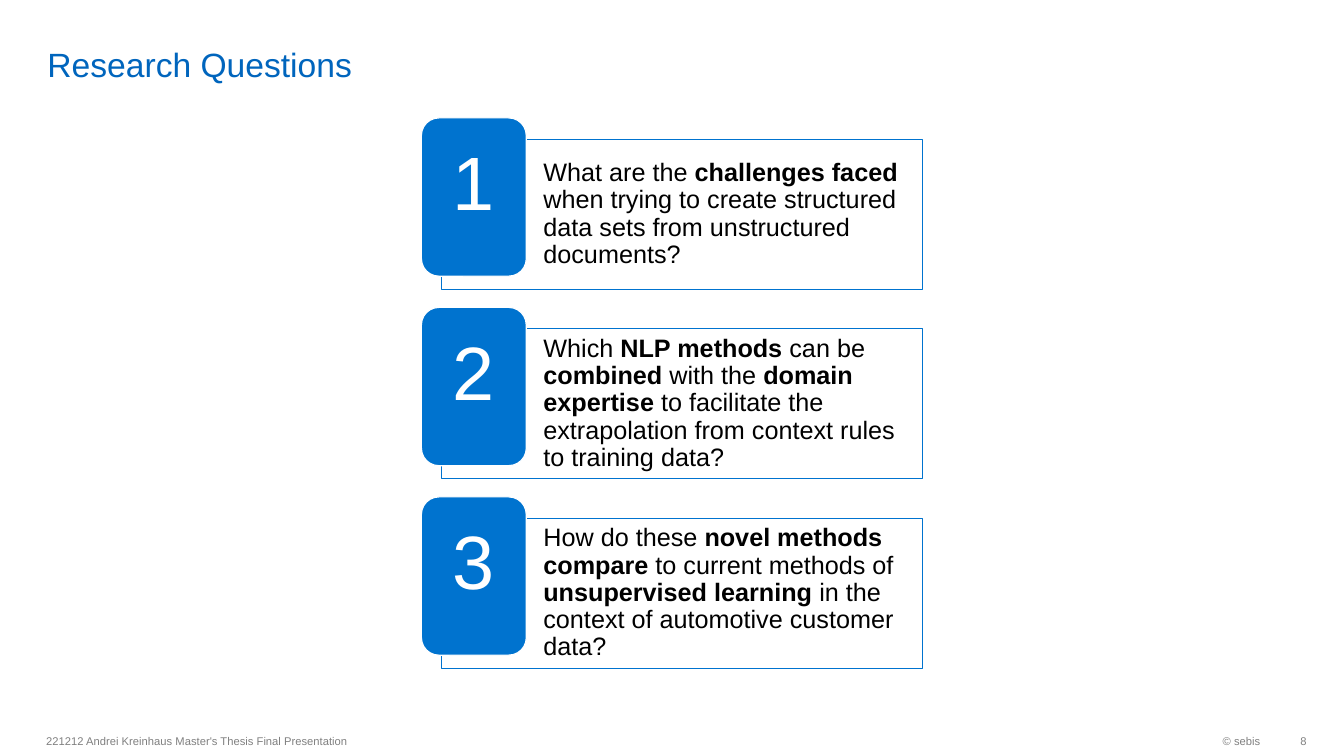
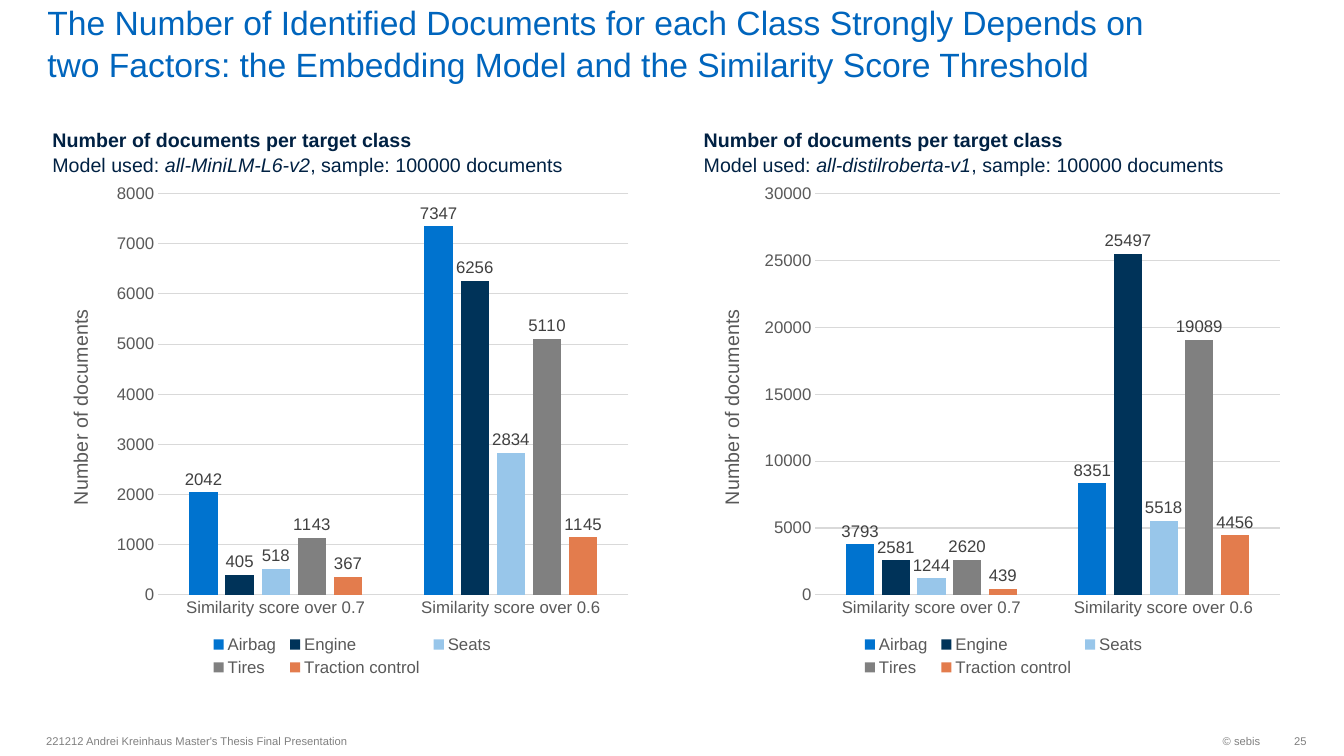
from dataclasses import dataclass

from lxml import etree
from pptx import Presentation
from pptx.chart.data import CategoryChartData
from pptx.dml.color import RGBColor
from pptx.enum.chart import XL_CHART_TYPE, XL_LABEL_POSITION, XL_LEGEND_POSITION, XL_TICK_MARK
from pptx.enum.shapes import MSO_SHAPE
from pptx.enum.text import MSO_ANCHOR, MSO_AUTO_SIZE, PP_ALIGN
from pptx.oxml.ns import qn
from pptx.util import Inches, Pt

LEFT, CENTER, RIGHT = PP_ALIGN.LEFT, PP_ALIGN.CENTER, PP_ALIGN.RIGHT
TOP, MIDDLE, BOTTOM = MSO_ANCHOR.TOP, MSO_ANCHOR.MIDDLE, MSO_ANCHOR.BOTTOM
RECTANGLE, ROUNDED = MSO_SHAPE.RECTANGLE, MSO_SHAPE.ROUNDED_RECTANGLE
NO_AUTOFIT = MSO_AUTO_SIZE.NONE
COLUMNS = XL_CHART_TYPE.COLUMN_CLUSTERED
LEGEND_BOTTOM = XL_LEGEND_POSITION.BOTTOM
OUTSIDE_END = XL_LABEL_POSITION.OUTSIDE_END
NO_TICK = XL_TICK_MARK.NONE


@dataclass(frozen=True)
class Theme:
    font: str = "Arial"
    title: RGBColor = RGBColor.from_string("0065BD")
    accent: RGBColor = RGBColor.from_string("0073CF")
    caption: RGBColor = RGBColor.from_string("002143")
    footer: RGBColor = RGBColor.from_string("808080")
    axis: RGBColor = RGBColor.from_string("595959")
    label: RGBColor = RGBColor.from_string("404040")
    grid: RGBColor = RGBColor.from_string("D9D9D9")
    black: RGBColor = RGBColor.from_string("000000")
    white: RGBColor = RGBColor.from_string("FFFFFF")
    series: tuple = ("0073CF", "003359", "98C6EA", "808080", "E37C4D")
    title_size: Pt = Pt(24)
    footer_size: Pt = Pt(8)
    question_size: Pt = Pt(18)
    number_size: Pt = Pt(54)
    caption_size: Pt = Pt(14)
    chart_size: Pt = Pt(12)


THEME = Theme()


def assign(target, **values):
    for attribute, value in values.items():
        setattr(target, attribute, value)


def write(frame, lines, size, colour, align=LEFT, anchor=TOP, spacing=1.0,
          margins=(0.1, 0.05, 0.1, 0.05)):
    left, top, right, bottom = map(Inches, margins)
    assign(frame, word_wrap=True, auto_size=NO_AUTOFIT, vertical_anchor=anchor,
           margin_left=left, margin_top=top, margin_right=right, margin_bottom=bottom)
    for index, line in enumerate(lines):
        paragraph = frame.add_paragraph() if index else frame.paragraphs[0]
        assign(paragraph, alignment=align, line_spacing=spacing)
        for text, style in line:
            run = paragraph.add_run()
            run.text = text
            assign(run.font, name=THEME.font, size=size,
                   bold=style == "bold", italic=style == "italic")
            run.font.color.rgb = colour


presentation = Presentation()
assign(presentation, slide_width=Inches(13.33), slide_height=Inches(7.5))
title_only = presentation.slide_layouts[5]

pages = [
    ("Research Questions", "8"),
    ("The Number of Identified Documents for each Class Strongly Depends on "
     "two Factors: the Embedding Model and the Similarity Score Threshold", "25"),
]
slides = []
for heading, page_number in pages:
    slide = presentation.slides.add_slide(title_only)
    slides.append(slide)
    title = slide.shapes.title
    assign(title, left=Inches(0.37), top=Inches(0.05), width=Inches(11.58), height=Inches(0.79))
    write(title.text_frame, [[(heading, "")]], THEME.title_size, THEME.title,
          anchor=BOTTOM, spacing=1.05, margins=(0.1, 0, 0.1, 0))
    footers = [
        (0.36, 6.3, "221212 Andrei Kreinhaus Master's Thesis Final Presentation", LEFT, 0.1),
        (10.26, 2.34, "© sebis", RIGHT, 0.1),
        (12.6, 0.36, page_number, RIGHT, 0),
    ]
    for left, width, text, align, right_margin in footers:
        footer = slide.shapes.add_textbox(Inches(left), Inches(7.19), Inches(width), Inches(0.32))
        write(footer.text_frame, [[(text, "")]], THEME.footer_size, THEME.footer,
              align, MIDDLE, margins=(0.1, 0.05, right_margin, 0.05))

questions_slide, results_slide = slides

questions = [
    [("What are the ", ""), ("challenges faced ", "bold"),
     ("when trying to create structured data sets from unstructured documents?", "")],
    [("Which ", ""), ("NLP methods ", "bold"), ("can be ", ""), ("combined", "bold"),
     (" with the ", ""), ("domain expertise", "bold"),
     (" to facilitate the extrapolation from context rules to training data?", "")],
    [("How do these ", ""), ("novel methods compare", "bold"),
     (" to current methods of ", ""), ("unsupervised learning ", "bold"),
     ("in the context of automotive customer data?", "")],
]
for index, question in enumerate(questions):
    top = 1.38 + index * 1.88
    panel = questions_slide.shapes.add_shape(
        RECTANGLE, Inches(4.38), Inches(top), Inches(4.77), Inches(1.49))
    badge = questions_slide.shapes.add_shape(
        ROUNDED, Inches(4.18), Inches(top - 0.21), Inches(1.04), Inches(1.57))
    for shape, fill, outline, weight in (
            (panel, THEME.white, THEME.accent, 0.75), (badge, THEME.accent, THEME.white, 0.85)):
        shape.shadow.inherit = False
        shape.fill.solid()
        shape.fill.fore_color.rgb = fill
        shape.line.color.rgb = outline
        shape.line.width = Pt(weight)
    panel_colour = panel.element.spPr.find(qn("a:solidFill")).find(qn("a:srgbClr"))
    etree.SubElement(panel_colour, qn("a:alpha"), val="40000")
    write(panel.text_frame, [question], THEME.question_size, THEME.black,
          anchor=MIDDLE, spacing=0.9, margins=(1.01, 0.07, 0.07, 0.07))
    write(badge.text_frame, [[(str(index + 1), "")]], THEME.number_size, THEME.white,
          CENTER, margins=(0.05, 0.12, 0.05, 0.05))

thresholds = ["Similarity score over 0.7", "Similarity score over 0.6"]
target_classes = ["Airbag", "Engine", "Seats", "Tires", "Traction control"]
models = [
    (0.52, "all-MiniLM-L6-v2", 8000, 1000, 0.18,
     [(2042, 7347), (405, 6256), (518, 2834), (1143, 5110), (367, 1145)]),
    (6.98, "all-distilroberta-v1", 30000, 5000, 0.19,
     [(3793, 8351), (2581, 25497), (1244, 5518), (2620, 19089), (439, 4456)]),
]
for left, model, maximum, step, plot_left, counts in models:
    caption = results_slide.shapes.add_textbox(
        Inches(left), Inches(1.26), Inches(5.83), Inches(0.54))
    write(caption.text_frame,
          [[("Number of documents per target class", "bold")],
           [("Model used: ", ""), (model, "italic"), (", sample: 100000 documents", "")]],
          THEME.caption_size, THEME.caption, spacing=1.05, margins=(0, 0, 0, 0))

    data = CategoryChartData()
    data.categories = thresholds
    for target_class, values in zip(target_classes, counts):
        data.add_series(target_class, values)
    chart = results_slide.shapes.add_chart(
        COLUMNS, Inches(left), Inches(1.72), Inches(5.83), Inches(5.04), data).chart
    assign(chart, has_title=False, has_legend=True)
    assign(chart.legend, position=LEGEND_BOTTOM, include_in_layout=False)

    plot = chart.plots[0]
    assign(plot, gap_width=219, overlap=-27, vary_by_categories=False, has_data_labels=True)
    assign(plot.data_labels, show_value=True, position=OUTSIDE_END)
    for series, colour in zip(plot.series, THEME.series):
        series.format.fill.solid()
        series.format.fill.fore_color.rgb = RGBColor.from_string(colour)

    threshold_axis, count_axis = chart.category_axis, chart.value_axis
    for axis in (threshold_axis, count_axis):
        assign(axis, major_tick_mark=NO_TICK, minor_tick_mark=NO_TICK)
    assign(count_axis, minimum_scale=0, maximum_scale=maximum, major_unit=step,
           has_major_gridlines=True)
    count_axis.format.line.fill.background()
    for line in (threshold_axis.format.line, count_axis.major_gridlines.format.line):
        line.color.rgb = THEME.grid
        line.width = Pt(0.75)
    write(count_axis.axis_title.text_frame, [[("Number of documents", "")]],
          THEME.caption_size, THEME.axis)

    for font, colour in (
            (chart.font, THEME.black), (chart.legend.font, THEME.axis),
            (threshold_axis.tick_labels.font, THEME.axis),
            (count_axis.tick_labels.font, THEME.axis), (plot.data_labels.font, THEME.label)):
        assign(font, name=THEME.font, size=THEME.chart_size)
        font.color.rgb = colour

    plot_area = chart.element.find(".//" + qn("c:plotArea"))
    axis_title = plot_area.find(qn("c:valAx")).find(qn("c:title"))
    rotation = axis_title.find(".//" + qn("a:bodyPr"))
    rotation.set("rot", "-5400000")
    rotation.set("vert", "horz")
    legend = chart.element.find(".//" + qn("c:legend"))
    layouts = [
        (plot_area, 0, {"layoutTarget": "inner", "xMode": "edge", "yMode": "edge",
                        "x": plot_left, "y": 0.04, "w": 0.98 - plot_left, "h": 0.79}),
        (axis_title, 1, {"xMode": "edge", "yMode": "edge", "x": 0.02, "y": 0.26}),
        (legend, 1, {"xMode": "edge", "yMode": "edge", "x": 0.26, "y": 0.9, "w": 0.5, "h": 0.1}),
    ]
    for part, position, settings in layouts:
        for previous in part.findall(qn("c:layout")):
            part.remove(previous)
        layout = etree.Element(qn("c:layout"))
        manual = etree.SubElement(layout, qn("c:manualLayout"))
        for setting, value in settings.items():
            etree.SubElement(manual, qn("c:" + setting), val=str(value))
        part.insert(position, layout)

presentation.save("out.pptx")
